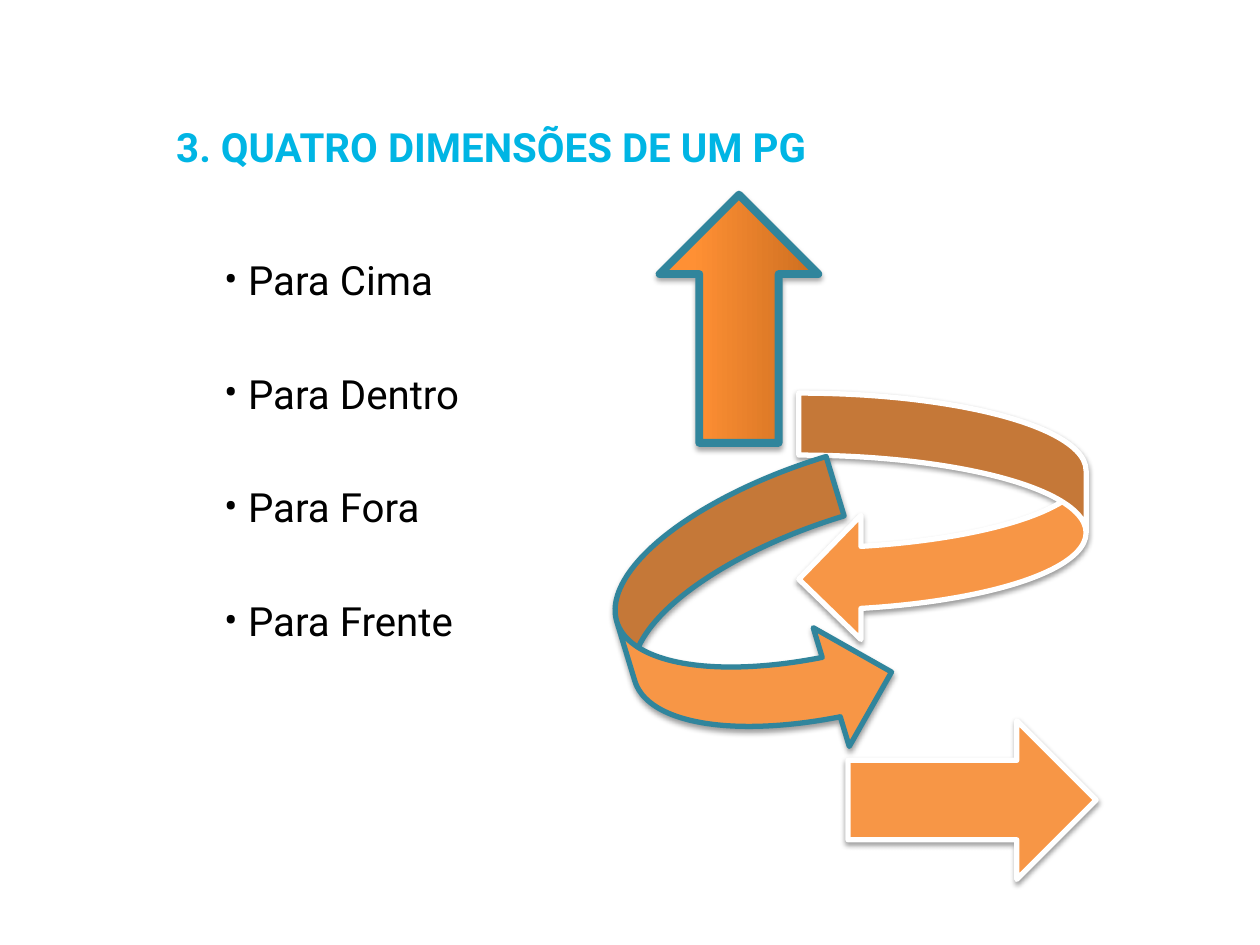
"""Build the slide on the four dimensions of a small group."""
from copy import deepcopy

from lxml.etree import SubElement
from pptx import Presentation
from pptx.dml.color import RGBColor
from pptx.enum.shapes import MSO_SHAPE as Shape
from pptx.enum.text import MSO_ANCHOR as Anchor, PP_ALIGN as Align
from pptx.oxml.ns import qn
from pptx.util import Inches, Pt

THEME = {
    "font": "Roboto",
    "size": Pt(23),
    "title": RGBColor.from_string("00B5E4"),
    "text": RGBColor.from_string("000000"),
    "orange": RGBColor.from_string("F79646"),
    "white": RGBColor.from_string("FFFFFF"),
    "teal": RGBColor.from_string("31859C"),
    "gradient": [(0, "CC6E20"), (0.8, "FF9034"), (1, "FF9136")],
}


def add_shadow(shape, opacity, distance):
    shape.shadow.inherit = False
    effects = shape._element.spPr.find(qn("a:effectLst"))
    shadow = SubElement(effects, qn("a:outerShdw"), blurRad=str(Pt(3.1)),
                        dist=str(Pt(distance)), dir="5400000", rotWithShape="0")
    color = SubElement(shadow, qn("a:srgbClr"), val="000000")
    SubElement(color, qn("a:alpha"), val=str(opacity * 1000))


def fill_gradient(shape, stops):
    shape.fill.gradient()
    shape.fill.gradient_angle = 90
    stop_list = shape._element.spPr.find(qn("a:gradFill")).find(qn("a:gsLst"))
    stop_list.append(deepcopy(stop_list[0]))
    for stop, (position, color) in zip(shape.fill.gradient_stops, stops):
        stop.position = position
        stop.color.rgb = RGBColor.from_string(color)


presentation = Presentation()
presentation.slide_width, presentation.slide_height = Inches(10), Inches(7.5)
slide = presentation.slides.add_slide(presentation.slide_layouts[6])

text_box = slide.shapes.add_textbox(Inches(1.3), Inches(0.92), Inches(7.72), Inches(4.95))
text_frame = text_box.text_frame
text_frame.word_wrap = True
text_frame.vertical_anchor = Anchor.TOP

lines = [
    ("3. QUATRO DIMENSÕES DE UM PG", "title", 0),
    ("Para Cima", "text", 48.5),
    ("Para Dentro", "text", 37.4),
    ("Para Fora", "text", 37.4),
    ("Para Frente", "text", 37.4),
]
for index, (text, color, space_before) in enumerate(lines):
    is_title = index == 0
    paragraph = text_frame.paragraphs[0] if is_title else text_frame.add_paragraph()
    paragraph.text = text
    paragraph.alignment = Align.JUSTIFY
    if not is_title:
        paragraph.space_before = Pt(space_before)
        properties = paragraph._p.get_or_add_pPr()
        properties.set("marL", str(Inches(0.57)))
        properties.set("indent", str(Inches(-0.19)))
        SubElement(properties, qn("a:buFont"), typeface=THEME["font"])
        SubElement(properties, qn("a:buChar"), char="•")
    font_format = {"name": THEME["font"], "size": THEME["size"], "bold": is_title}
    for name, value in font_format.items():
        setattr(paragraph.font, name, value)
    paragraph.font.color.rgb = THEME[color]

arrows = [
    (Shape.RIGHT_ARROW, (6.73, 5.72, 1.97, 1.26), 0, "orange", "white", 3, 38, 1.6),
    (Shape.RIGHT_ARROW, (4.88, 1.9, 1.97, 1.26), 270, "gradient", "teal", 4.5, 35, 1.8),
    (Shape.CURVED_LEFT_ARROW, (6.34, 3.12, 2.28, 1.97), 0, "orange", "white", 3, 38, 1.6),
    (Shape.CURVED_RIGHT_ARROW, (4.96, 3.86, 1.97, 2.28), 343.1, "orange", "teal", 3, 38, 1.6),
]
for kind, box, rotation, fill, line, width, opacity, distance in arrows:
    arrow = slide.shapes.add_shape(kind, *map(Inches, box))
    arrow.rotation = rotation
    if fill == "gradient":
        fill_gradient(arrow, THEME[fill])
    else:
        arrow.fill.solid()
        arrow.fill.fore_color.rgb = THEME[fill]
    arrow.line.color.rgb = THEME[line]
    arrow.line.width = Pt(width)
    add_shadow(arrow, opacity, distance)

presentation.save("out.pptx")
